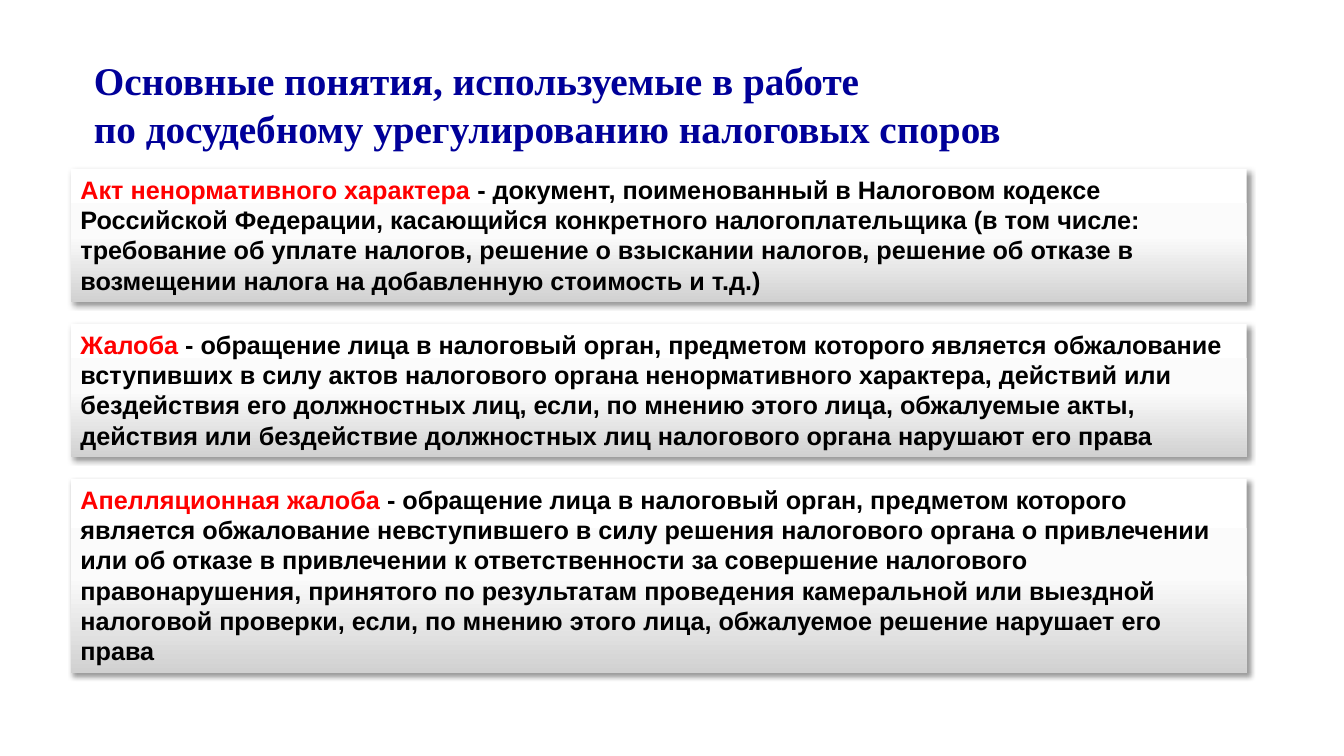
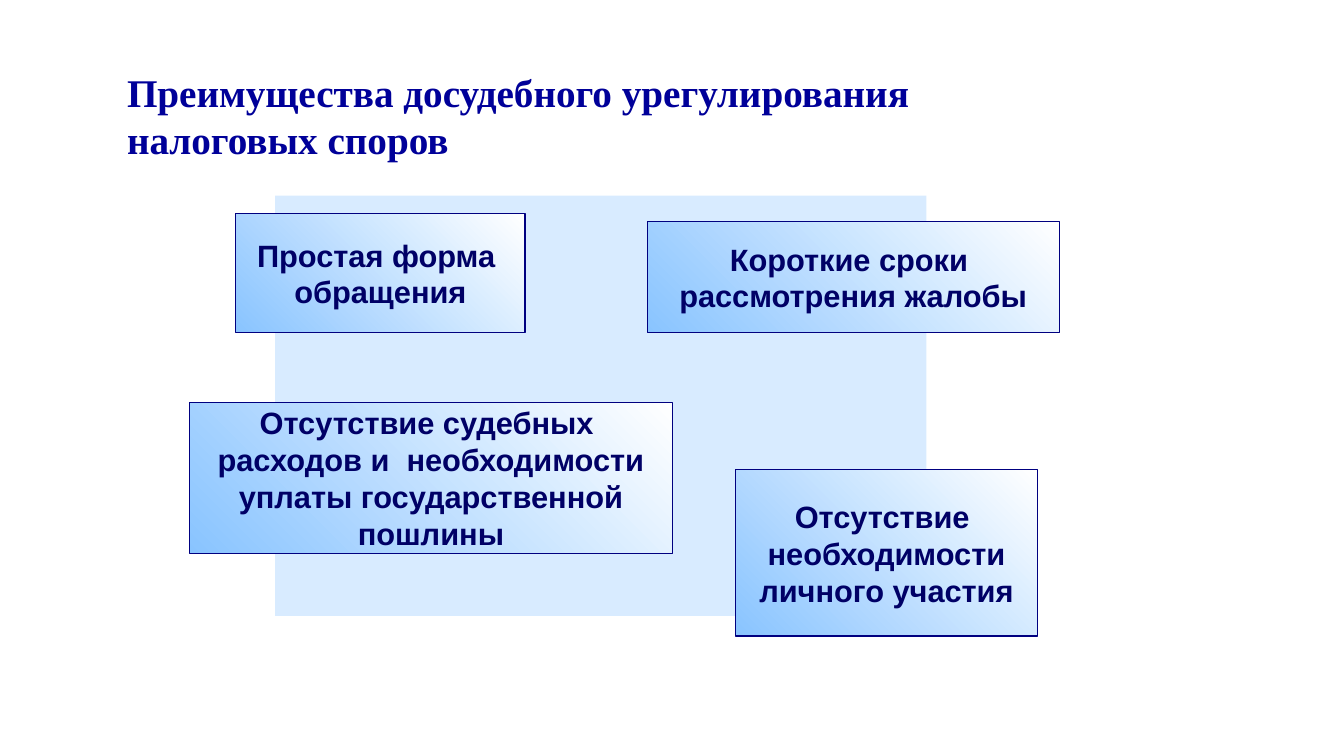
import dataclasses

import lxml.etree
import pptx
import pptx.dml.color
import pptx.enum.shapes
import pptx.enum.text
import pptx.oxml.ns
import pptx.util

COLORS = {
    "title": "000099",
    "term": "FF0000",
    "definition": "000000",
    "benefit": "000066",
    "benefit_line": "000080",
    "panel": "99CCFF",
    "shadow": "000000",
}
CARD_GRADIENT = ((0, "FFFFFF"), (50, "FBFBFB"), (100, "D1D1D1"))
BENEFIT_GRADIENT = ((0, "89C4FF"), (100, "FFFFFF"))
TITLE_FONT = "Times New Roman"
BODY_FONT = "Arial"
SLIDE_WIDTH = pptx.util.Inches(13.33)
SLIDE_HEIGHT = pptx.util.Inches(7.5)
TITLE_ONLY_LAYOUT = 5


@dataclasses.dataclass(frozen=True)
class Area:
    """A rectangle in percent of the slide's width and height."""
    left: float
    top: float
    width: float
    height: float

    def lengths(self) -> tuple[int, int, int, int]:
        return (
            int(SLIDE_WIDTH * self.left / 100),
            int(SLIDE_HEIGHT * self.top / 100),
            int(SLIDE_WIDTH * self.width / 100),
            int(SLIDE_HEIGHT * self.height / 100),
        )


@dataclasses.dataclass(frozen=True)
class Definition:
    term: str
    meaning: str
    height: float


@dataclasses.dataclass(frozen=True)
class Benefit:
    area: Area
    lines: tuple[str, ...]


CARDS_LEFT, CARDS_TOP, CARDS_WIDTH, CARDS_GAP = 5.25, 22.4, 87.5, 2.9
DEFINITIONS = (
    Definition(
        "Акт ненормативного характера ",
        "- документ, поименованный в Налоговом кодексе Российской Федерации, "
        "касающийся конкретного налогоплательщика (в том числе: требование об уплате "
        "налогов, решение о взыскании налогов, решение об отказе в возмещении налога "
        "на добавленную стоимость и т.д.)",
        17.6,
    ),
    Definition(
        "Жалоба",
        " - обращение лица в налоговый орган, предметом которого является обжалование "
        "вступивших в силу актов налогового органа ненормативного характера, действий "
        "или бездействия его должностных лиц, если, по мнению этого лица, обжалуемые "
        "акты, действия или бездействие должностных лиц налогового органа нарушают "
        "его права",
        17.6,
    ),
    Definition(
        "Апелляционная жалоба ",
        "- обращение лица в налоговый орган, предметом которого является обжалование "
        "невступившего в силу решения налогового органа о привлечении или об отказе в "
        "привлечении к ответственности за совершение налогового правонарушения, "
        "принятого по результатам проведения камеральной или выездной налоговой "
        "проверки, если, по мнению этого лица, обжалуемое решение нарушает его права",
        25.6,
    ),
)

PANEL_AREA = Area(20.48, 25.87, 48.45, 55.6)
BENEFITS = (
    Benefit(Area(17.55, 28.27, 21.52, 15.73), ("Простая форма ", "обращения")),
    Benefit(
        Area(14.1, 53.2, 35.93, 20),
        ("Отсутствие судебных ", "расходов и  необходимости",
         "уплаты государственной", "пошлины"),
    ),
    Benefit(
        Area(54.75, 62.13, 22.43, 22),
        ("Отсутствие ", "необходимости", "личного участия"),
    ),
    Benefit(Area(48.15, 29.33, 30.67, 14.67), ("Короткие сроки ", "рассмотрения жалобы")),
)


def rgb(name: str) -> pptx.dml.color.RGBColor:
    return pptx.dml.color.RGBColor.from_string(COLORS[name])


def add_element(parent, tag: str, **attributes):
    element = lxml.etree.SubElement(parent, pptx.oxml.ns.qn(tag))
    for name, value in attributes.items():
        element.set(name, str(value))
    return element


def add_rectangle(slide, area: Area):
    shape = slide.shapes.add_shape(
        pptx.enum.shapes.MSO_SHAPE.RECTANGLE, *area.lengths()
    )
    shape.shadow.inherit = False
    shape.line.fill.background()
    return shape


def fill_gradient(shape, stops: tuple[tuple[int, str], ...], angle: float) -> None:
    """Fill with stops of (percent, hex colour); the angle is counterclockwise."""
    shape.fill.gradient()
    shape.fill.gradient_angle = angle
    stop_list = shape.element.spPr.find(".//" + pptx.oxml.ns.qn("a:gsLst"))
    for stop in list(stop_list):
        stop_list.remove(stop)
    for percent, color in stops:
        stop = add_element(stop_list, "a:gs", pos=percent * 1000)
        add_element(stop, "a:srgbClr", val=color)


def add_shadow(shape) -> None:
    effects = shape.element.spPr.find(pptx.oxml.ns.qn("a:effectLst"))
    shadow = add_element(
        effects, "a:outerShdw",
        blurRad=pptx.util.Pt(4), dist=pptx.util.Pt(3), dir=45 * 60000,
        algn="tl", rotWithShape=0,
    )
    color = add_element(shadow, "a:srgbClr", val=COLORS["shadow"])
    add_element(color, "a:alpha", val=40000)


def write_lines(frame, lines: tuple[str, ...], font_name: str, size: int,
                color: str, alignment) -> None:
    for index, line in enumerate(lines):
        paragraph = frame.add_paragraph() if index else frame.paragraphs[0]
        paragraph.text = line
        paragraph.alignment = alignment
        paragraph.font.name = font_name
        paragraph.font.size = pptx.util.Pt(size)
        paragraph.font.bold = True
        paragraph.font.color.rgb = rgb(color)


def add_titled_slide(presentation, area: Area, lines: tuple[str, ...]):
    slide = presentation.slides.add_slide(presentation.slide_layouts[TITLE_ONLY_LAYOUT])
    title = slide.shapes.title
    title.left, title.top, title.width, title.height = area.lengths()
    frame = title.text_frame
    frame.word_wrap = True
    frame.auto_size = pptx.enum.text.MSO_AUTO_SIZE.NONE
    frame.vertical_anchor = pptx.enum.text.MSO_ANCHOR.MIDDLE
    frame.margin_left = frame.margin_right = pptx.util.Inches(0.12)
    frame.margin_top = frame.margin_bottom = pptx.util.Inches(0.06)
    write_lines(frame, lines, TITLE_FONT, 28, "title", pptx.enum.text.PP_ALIGN.LEFT)
    return slide


def add_definition(slide, definition: Definition, top: float) -> None:
    shape = add_rectangle(slide, Area(CARDS_LEFT, top, CARDS_WIDTH, definition.height))
    fill_gradient(shape, CARD_GRADIENT, 270)
    add_shadow(shape)
    frame = shape.text_frame
    frame.word_wrap = True
    frame.auto_size = pptx.enum.text.MSO_AUTO_SIZE.SHAPE_TO_FIT_TEXT
    frame.vertical_anchor = pptx.enum.text.MSO_ANCHOR.TOP
    paragraph = frame.paragraphs[0]
    paragraph.alignment = pptx.enum.text.PP_ALIGN.LEFT
    paragraph.font.name = BODY_FONT
    paragraph.font.size = pptx.util.Pt(18)
    paragraph.font.bold = True
    for text, color in ((definition.term, "term"), (definition.meaning, "definition")):
        run = paragraph.add_run()
        run.text = text
        run.font.color.rgb = rgb(color)


def add_panel(slide) -> None:
    panel = add_rectangle(slide, PANEL_AREA)
    panel.fill.solid()
    panel.fill.fore_color.rgb = rgb("panel")
    color = panel.element.spPr.find(".//" + pptx.oxml.ns.qn("a:srgbClr"))
    add_element(color, "a:alpha", val=38000)


def add_benefit(slide, benefit: Benefit) -> None:
    shape = add_rectangle(slide, benefit.area)
    fill_gradient(shape, BENEFIT_GRADIENT, 45)
    shape.line.color.rgb = rgb("benefit_line")
    shape.line.width = pptx.util.Pt(0.75)
    frame = shape.text_frame
    frame.word_wrap = False
    frame.vertical_anchor = pptx.enum.text.MSO_ANCHOR.MIDDLE
    write_lines(frame, benefit.lines, BODY_FONT, 22, "benefit",
                pptx.enum.text.PP_ALIGN.CENTER)


def build_definitions_slide(presentation) -> None:
    slide = add_titled_slide(
        presentation, Area(6.08, 6.4, 85, 14.67),
        ("Основные понятия, используемые в работе",
         "по досудебному урегулированию налоговых споров"),
    )
    top = CARDS_TOP
    for definition in DEFINITIONS:
        add_definition(slide, definition, top)
        top += definition.height + CARDS_GAP


def build_benefits_slide(presentation) -> None:
    slide = add_titled_slide(
        presentation, Area(8.55, 7.87, 80.78, 14.67),
        ("Преимущества досудебного урегулирования", "налоговых споров"),
    )
    add_panel(slide)
    for benefit in BENEFITS:
        add_benefit(slide, benefit)


def main() -> None:
    presentation = pptx.Presentation()
    presentation.slide_width = SLIDE_WIDTH
    presentation.slide_height = SLIDE_HEIGHT
    build_definitions_slide(presentation)
    build_benefits_slide(presentation)
    presentation.save("out.pptx")


if __name__ == "__main__":
    main()
